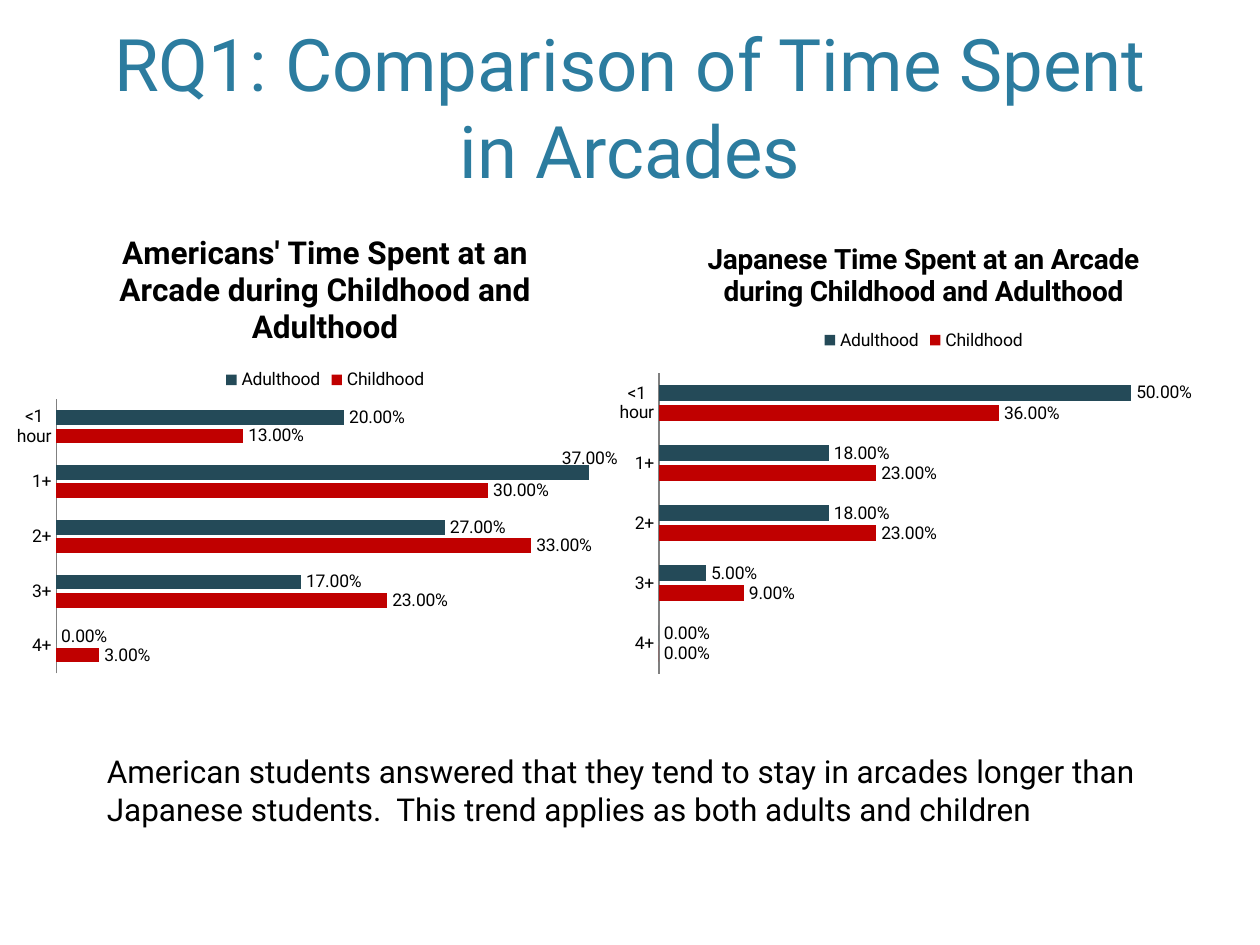
from pptx import Presentation
from pptx.chart.data import CategoryChartData
from pptx.dml.color import RGBColor
from pptx.enum import chart as ch, text
from pptx.oxml import ns, parse_xml
from pptx.util import Inches, Pt

FONT = "Roboto"
TEAL = RGBColor(0x2C, 0x7C, 0x9F)
NAVY = RGBColor(0x24, 0x4A, 0x58)
RED = RGBColor(0xC0, 0x00, 0x00)
BLACK = RGBColor(0, 0, 0)
GRAY = RGBColor(0x80, 0x80, 0x80)
PERCENT = "0.00%"
CATEGORIES = ["4+", "3+", "2+", "1+", "<1 hour"]


def write(tf, words, size, color=BLACK, bold=False, align=None):
    p = tf.paragraphs[0]
    p.alignment = align
    r = p.add_run()
    r.text = words
    r.font.name, r.font.size, r.font.bold = FONT, Pt(size), bold
    r.font.color.rgb = color


def layout(**parts):
    body = "".join(f'<c:{k} val="{v}"/>' for k, v in parts.items())
    return parse_xml(f'<c:layout {ns.nsdecls("c")}><c:manualLayout>{body}'
                     '</c:manualLayout></c:layout>')


prs = Presentation()
prs.slide_width, prs.slide_height = Inches(10), Inches(7.5)
s = prs.slides.add_slide(prs.slide_layouts[5])

title = s.shapes.title
title.left, title.top = Inches(0.6), Inches(0.12)
title.width, title.height = Inches(8.8), Inches(1.46)
title.text_frame.vertical_anchor = text.MSO_ANCHOR.BOTTOM
write(title.text_frame, "RQ1: Comparison of Time Spent in Arcades", 41.4, TEAL,
      align=text.PP_ALIGN.CENTER)

sp = s.shapes.add_textbox(Inches(0.75), Inches(5.92), Inches(8.83), Inches(0.71))
sp.text_frame.word_wrap = True
sp.text_frame.auto_size = text.MSO_AUTO_SIZE.SHAPE_TO_FIT_TEXT
write(sp.text_frame, "American students answered that they tend to stay in arcades longer "
      "than Japanese students.  This trend applies as both adults and children", 18)

charts = [
    ("Americans' Time Spent at an Arcade during Childhood and Adulthood", 18,
     (0.04, 1.67, 5.08, 3.75), (0.08, 0.4, 0.9, 0.58), 0.4,
     [0.03, 0.23, 0.33, 0.3, 0.13], [0, 0.17, 0.27, 0.37, 0.2]),
    ("Japanese Time Spent at an Arcade during Childhood and Adulthood", 16,
     (4.83, 1.75, 5, 3.67), (0.08, 0.33, 0.9, 0.65), 0.6,
     [0, 0.09, 0.23, 0.23, 0.36], [0, 0.05, 0.18, 0.18, 0.5]),
]
graphs = []
for heading, size, place, plot_box, maximum, childhood, adulthood in charts:
    data = CategoryChartData(number_format=PERCENT)
    data.categories = CATEGORIES
    data.add_series("Childhood", childhood)
    data.add_series("Adulthood", adulthood)
    chart = s.shapes.add_chart(ch.XL_CHART_TYPE.BAR_CLUSTERED,
                               *map(Inches, place), data).chart
    graphs.append(chart)
    chart.font.name, chart.font.size = FONT, Pt(10)
    chart.font.color.rgb = BLACK
    write(chart.chart_title.text_frame, heading, size, bold=True)
    chart.chart_title.include_in_layout = False
    chart.has_legend = True
    chart.legend.position = ch.XL_LEGEND_POSITION.TOP
    chart.legend.include_in_layout = False

    axis = chart.category_axis
    axis.major_tick_mark = ch.XL_TICK_MARK.NONE
    axis.format.line.color.rgb = GRAY
    values = chart.value_axis
    values.visible = False
    values.has_major_gridlines = False
    values.minimum_scale, values.maximum_scale = 0, maximum
    values.tick_labels.number_format = PERCENT
    values.tick_labels.number_format_is_linked = False

    plot = chart.plots[0]
    plot.gap_width, plot.overlap, plot.vary_by_categories = 150, -25, False
    for series, color in zip(plot.series, (RED, NAVY)):
        series.format.fill.solid()
        series.format.fill.fore_color.rgb = color
        labels = series.data_labels
        labels.show_value = True
        labels.number_format, labels.number_format_is_linked = PERCENT, False
        labels.position = ch.XL_LABEL_POSITION.OUTSIDE_END

    area = chart._chartSpace.chart.plotArea
    for old in area.findall(ns.qn("c:layout")):
        area.remove(old)
    x, y, w, h = plot_box
    area.insert(0, layout(layoutTarget="inner", xMode="edge", yMode="edge",
                          x=x, y=y, w=w, h=h))

adult = graphs[0].plots[0].series[1]
adult.points[3].data_label.position = ch.XL_LABEL_POSITION.OUTSIDE_END
label = adult._element.find(".//" + ns.qn("c:dLbl"))
label.find(ns.qn("c:idx")).addnext(layout(x=-0.05, y=-0.03))

prs.save("out.pptx")
